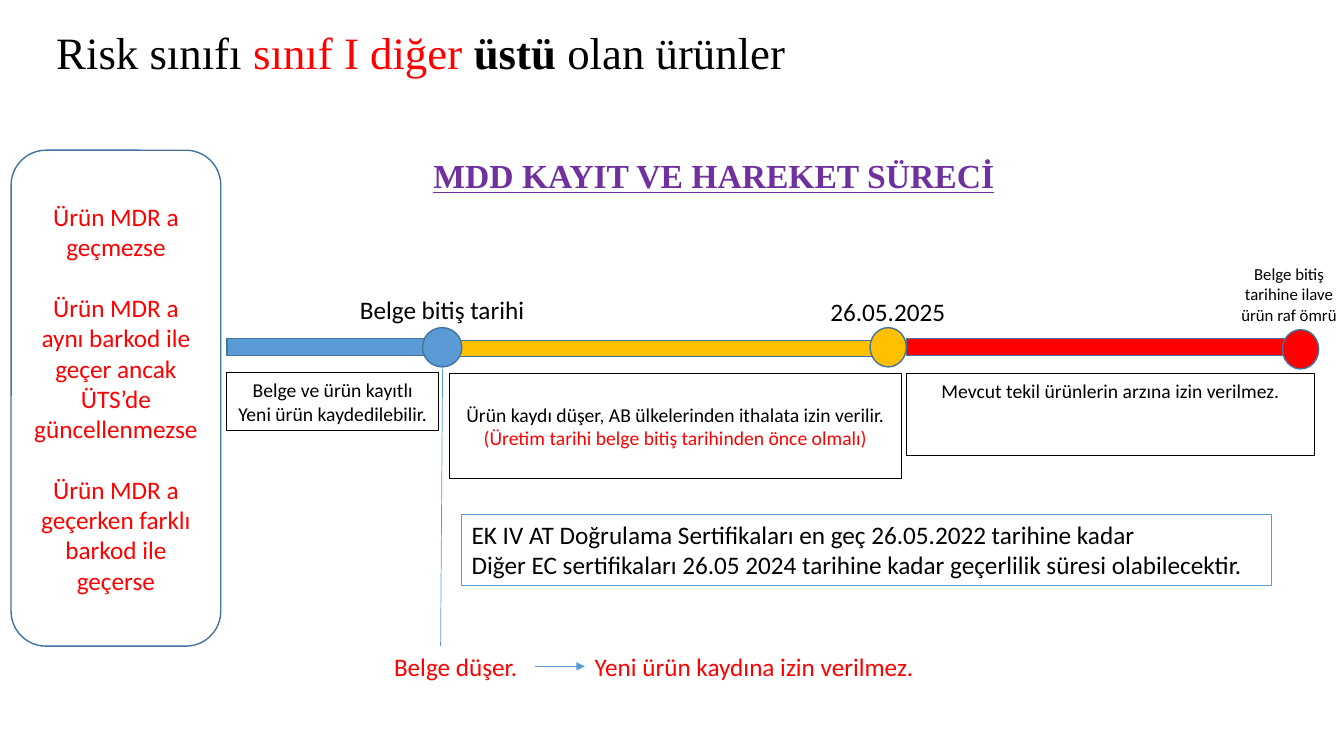
"""Build the slide on the MDD registration and movement timeline."""
import pptx
import pptx.dml.color
import pptx.enum.shapes
import pptx.enum.text
import pptx.oxml
import pptx.oxml.ns
import pptx.util

Inches = pptx.util.Inches
Pt = pptx.util.Pt
SHAPES = pptx.enum.shapes.MSO_SHAPE
ALIGN = pptx.enum.text.PP_ALIGN
ANCHOR = pptx.enum.text.MSO_ANCHOR
COLORS = {
    "white": "FFFFFF", "black": "000000", "red": "FF0000", "blue": "5B9BD5",
    "outline": "43739E", "amber": "FFC000", "purple": "7030A0",
}

presentation = pptx.Presentation()
presentation.slide_width = Inches(13.33)
presentation.slide_height = Inches(7.5)
slide = presentation.slides.add_slide(presentation.slide_layouts[6])


def rgb(name):
    return pptx.dml.color.RGBColor.from_string(COLORS[name])


def add_text(paragraphs, box, kind=None, fill=None, line=None, line_width=0.75, size=18,
             font="Calibri", color="black", align=ALIGN.CENTER, anchor=ANCHOR.TOP,
             wrap=True, bold=False, underline=False, gap=0, spacing=None):
    """Each paragraph is a list of (text, color, bold) runs; None keeps the default."""
    place = [Inches(length) for length in box]
    if kind is None:
        shape = slide.shapes.add_textbox(*place)
    else:
        shape = slide.shapes.add_shape(kind, *place)
        shape.shadow.inherit = False
    if fill:
        shape.fill.solid()
        shape.fill.fore_color.rgb = rgb(fill)
    else:
        shape.fill.background()
    if line:
        shape.line.color.rgb = rgb(line)
        shape.line.width = Pt(line_width)
    else:
        shape.line.fill.background()
    frame = shape.text_frame
    frame.word_wrap = wrap
    frame.vertical_anchor = anchor
    for index, runs in enumerate(paragraphs):
        paragraph = frame.add_paragraph() if index else frame.paragraphs[0]
        paragraph.alignment = align
        paragraph.line_spacing = spacing
        if index and gap:
            paragraph.space_before = Pt(gap)
        for text, run_color, run_bold in runs:
            run = paragraph.add_run()
            run.text = text
            run.font.name = font
            run.font.size = Pt(size)
            run.font.bold = bold or bool(run_bold)
            run.font.underline = underline
            run.font.color.rgb = rgb(run_color or color)
    return shape


def add_line(start, end):
    connector = slide.shapes.add_connector(
        pptx.enum.shapes.MSO_CONNECTOR.STRAIGHT,
        *[Inches(length) for length in (*start, *end)])
    connector.line.color.rgb = rgb("blue")
    connector.line.width = Pt(0.5)
    properties = connector._element.spPr
    properties.append(pptx.oxml.parse_xml(
        '<a:effectLst %s/>' % pptx.oxml.ns.nsdecls("a")))
    return connector


add_text([[("Risk sınıfı ", None, False), ("sınıf I diğer ", "red", False),
           ("üstü", None, True), (" olan ürünler", None, False)]],
         (0.46, 0.13, 11.5, 0.84), size=32, font="Times New Roman", align=ALIGN.LEFT,
         anchor=ANCHOR.MIDDLE, spacing=0.9)
add_text([[("MDD KAYIT VE HAREKET SÜRECİ", None, True)]], (4.2, 1.49, 5.82, 0.5),
         size=24, font="Times New Roman", color="purple", align=ALIGN.LEFT, wrap=False,
         underline=True)

conditions = ["Ürün MDR a geçmezse",
              "Ürün MDR a aynı barkod ile geçer ancak ÜTS’de güncellenmezse",
              "Ürün MDR a geçerken farklı barkod ile geçerse"]
add_text([[(condition, None, False)] for condition in conditions],
         (0.11, 1.49, 2.08, 4.92), kind=SHAPES.ROUNDED_RECTANGLE, fill="white",
         line="outline", line_width=1, color="red", anchor=ANCHOR.MIDDLE, gap=22)

timeline = [
    (SHAPES.RECTANGLE, "blue", (2.25, 3.36, 2.03, 0.17)),
    (SHAPES.RECTANGLE, "amber", (4.52, 3.38, 4.24, 0.16)),
    (SHAPES.RECTANGLE, "red", (8.99, 3.36, 4.05, 0.17)),
    (SHAPES.OVAL, "blue", (4.19, 3.25, 0.39, 0.39)),
    (SHAPES.OVAL, "amber", (8.63, 3.25, 0.36, 0.39)),
    (SHAPES.OVAL, "red", (12.72, 3.27, 0.36, 0.39)),
]
for kind, color, box in timeline:
    add_text([], box, kind=kind, fill=color, line="outline", line_width=1)

milestones = [
    ("Belge bitiş tarihi", (3.31, 2.87, 2.15, 0.4), 18),
    ("26.05.2025", (8.04, 2.89, 1.53, 0.4), 18),
    ("Belge bitiş tarihine ilave ürün raf ömrü", (12.15, 2.57, 1.27, 0.71), 12),
]
for label, box, size in milestones:
    add_text([[(label, None, False)]], box, size=size)

stages = [
    ([("Belge ve ürün kayıtlı", None), ("Yeni ürün kaydedilebilir. ", None)],
     (2.25, 3.7, 2.1, 0.57), ANCHOR.TOP),
    ([("Ürün kaydı düşer, AB ülkelerinden ithalata izin verilir.", None),
      ("(Üretim tarihi belge bitiş tarihinden önce olmalı)", "red")],
     (4.46, 3.71, 4.48, 1.04), ANCHOR.MIDDLE),
    ([("Mevcut tekil ürünlerin arzına izin verilmez.", None)],
     (8.99, 3.71, 4.05, 0.81), ANCHOR.TOP),
]
for lines, box, anchor in stages:
    add_text([[(text, color, False)] for text, color in lines], box,
             kind=SHAPES.RECTANGLE, line="black", size=14, anchor=anchor)

certificates = ["EK IV AT Doğrulama Sertifikaları en geç 26.05.2022 tarihine kadar",
                "Diğer EC sertifikaları 26.05 2024 tarihine kadar geçerlilik süresi olabilecektir."]
add_text([[(certificate, None, False)] for certificate in certificates],
         (4.58, 5.1, 8.03, 0.71), kind=SHAPES.RECTANGLE, line="blue", align=ALIGN.LEFT)

expiry = add_text([[("Belge düşer.", None, False)]], (3.81, 6.41, 1.5, 0.4),
                  color="red", align=ALIGN.LEFT, wrap=False)
result = add_text([[("Yeni ürün kaydına izin verilmez.", None, False)]],
                  (5.8, 6.41, 4.49, 0.4), color="red", align=ALIGN.LEFT)
add_line((4.37, 6.41), (4.39, 3.66))
arrow = add_line((5.31, 6.61), (5.8, 6.61))
arrow.begin_connect(expiry, 3)
arrow.end_connect(result, 1)
arrow.line._get_or_add_ln().append(pptx.oxml.parse_xml(
    '<a:tailEnd type="triangle" %s/>' % pptx.oxml.ns.nsdecls("a")))

presentation.save("out.pptx")
